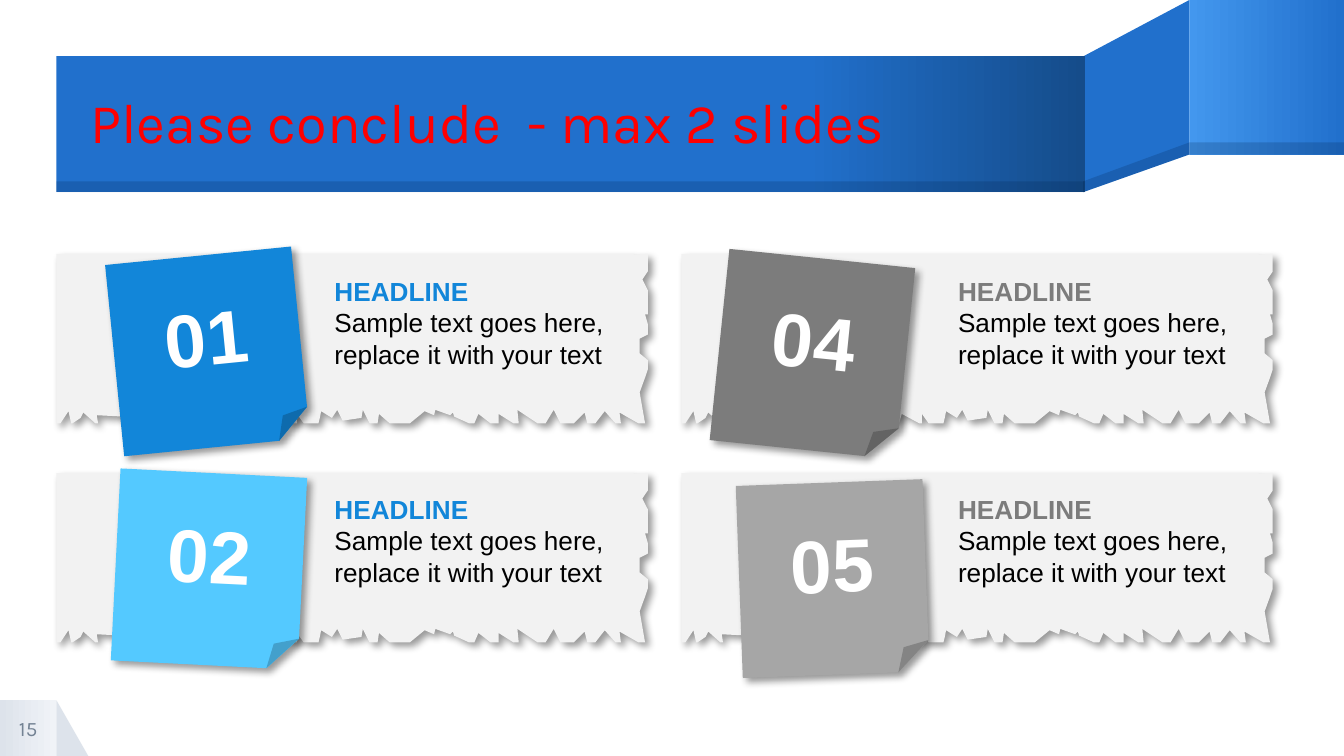
from lxml import etree
from pptx import Presentation
from pptx.dml.color import RGBColor
from pptx.enum import shapes, text
from pptx.oxml import ns
from pptx.util import Inches, Pt

KIND = shapes.MSO_SHAPE
MID = text.MSO_ANCHOR.MIDDLE
BLUE, SKY, GREY, SILVER = "1286D9", "54C9FF", "7C7C7C", "A6A6A6"
BAND, SHADE, PALE = "2170CC", "001F46", "DDE3EB"

# Torn paper edges, in inches from the top left corner of the paper
RIGHT = [
    (4.3, 0), (4.29, 0.01), (4.35, 0), (4.4, 0), (4.4, 0.13), (4.36, 0.19),
    (4.4, 0.27), (4.4, 0.45), (4.38, 0.45), (4.4, 0.52), (4.4, 0.6),
    (4.34, 0.63), (4.34, 0.74), (4.4, 0.79), (4.4, 0.86), (4.38, 0.92),
    (4.34, 1.03), (4.38, 1.26),
]
BOTTOM = [
    (4.33, 1.26), (4.19, 1.18), (4.2, 1.26), (4.16, 1.26), (4.08, 1.17),
    (4.01, 1.26), (3.95, 1.26), (3.93, 1.18), (3.85, 1.26), (3.75, 1.26),
    (3.7, 1.16), (3.64, 1.26), (3.58, 1.26), (3.43, 1.16), (3.44, 1.26),
    (3.4, 1.26), (3.29, 1.19), (3.29, 1.26), (3.23, 1.26), (3.14, 1.19),
    (3.11, 1.26), (3.07, 1.26), (2.96, 1.21), (2.95, 1.18), (2.93, 1.2),
    (2.82, 1.16), (2.81, 1.2), (2.74, 1.17), (2.63, 1.26), (2.48, 1.26),
    (2.4, 1.19), (2.39, 1.26), (2.33, 1.26), (2.28, 1.16), (2.27, 1.22),
    (2.13, 1.24), (2.09, 1.16), (2.05, 1.22), (1.97, 1.17), (1.96, 1.22),
    (1.95, 1.26), (1.84, 1.26), (1.79, 1.19), (1.79, 1.26), (1.77, 1.26),
    (1.64, 1.19), (1.62, 1.26), (1.61, 1.26), (1.52, 1.14), (1.46, 1.21),
    (1.44, 1.26), (1.35, 1.26), (1.32, 1.21), (1.18, 1.18), (1.12, 1.26),
    (1.11, 1.26), (1.06, 1.2), (1, 1.26), (0.98, 1.26), (0.92, 1.18),
    (0.74, 1.18), (0.71, 1.16), (0.5, 1.21), (0.3, 1.2), (0.31, 1.26),
    (0.29, 1.26), (0.2, 1.18), (0.18, 1.22), (0.12, 1.26), (0.11, 1.26),
    (0.09, 1.17), (0.03, 1.26), (0, 1.26),
]
TORN = [(0, 0)] + RIGHT + BOTTOM


def rgb(tone):
    return RGBColor.from_string(tone)


def paint(shape, tone, alpha=None):
    shape.shadow.inherit = False
    shape.line.fill.background()
    shape.fill.solid()
    shape.fill.fore_color.rgb = rgb(tone)
    if alpha:
        node = shape.fill._xPr.find(".//" + ns.qn("a:srgbClr"))
        etree.SubElement(node, ns.qn("a:alpha"), val=str(alpha * 1000))


def blend(shape, first, last, start=0):
    """Fill from left to right, with the change beginning at start."""
    shape.fill.gradient()
    shape.fill.gradient_angle = 0
    for stop, tone, place in zip(shape.fill.gradient_stops, (first, last), (start, 1)):
        stop.color.rgb = rgb(tone)
        stop.position = place


def shade(shape):
    """Cast a soft shadow to the lower right."""
    effects = shape._element.spPr.find(ns.qn("a:effectLst"))
    outer = etree.SubElement(
        effects, ns.qn("a:outerShdw"), blurRad=str(Pt(4)), dist=str(Pt(3)),
        dir=str(45 * 60000), algn="tl", rotWithShape="0")
    tone = etree.SubElement(outer, ns.qn("a:srgbClr"), val="000000")
    etree.SubElement(tone, ns.qn("a:alpha"), val="40000")


def block(slide, kind, box, tone, alpha=None):
    shape = slide.shapes.add_shape(kind, *map(Inches, box))
    paint(shape, tone, alpha)
    return shape


def outline(slide, points, tone, alpha=None):
    spots = [(Inches(x), Inches(y)) for x, y in points]
    pen = slide.shapes.build_freeform(*spots[0])
    pen.add_line_segments(spots[1:], close=True)
    shape = pen.convert_to_shape()
    paint(shape, tone, alpha)
    return shape


def style(para, size, face, tone, bold=False, align=text.PP_ALIGN.LEFT):
    para.alignment = align
    font = para.font
    font.size, font.name, font.bold = Pt(size), face, bold
    font.color.rgb = rgb(tone)


def label(slide, box, words, margin=True):
    """Add a wrapped text box and return its frame."""
    frame = slide.shapes.add_textbox(*map(Inches, box)).text_frame
    frame.word_wrap = True
    frame.text = words
    if not margin:
        frame.margin_left = frame.margin_right = 0
        frame.margin_top = frame.margin_bottom = 0
        frame.vertical_anchor = MID
    return frame


def banner(slide):
    outline(slide, [(8.85, 0), (8.06, 0.42), (8.06, 1.43), (8.85, 1.15)], BAND)
    end = block(slide, KIND.RECTANGLE, (8.85, 0, 1.15, 1.15), BAND)
    blend(end, "4397EE", BAND)
    front = block(slide, KIND.RECTANGLE, (0.42, 0.42, 7.65, 1.01), BAND)
    blend(front, BAND, "154C8A", 0.73)
    outline(slide, [(8.85, 1.06), (8.06, 1.35), (8.06, 1.43), (8.85, 1.15)], SHADE, 20)
    block(slide, KIND.RECTANGLE, (8.85, 1.06, 1.15, 0.09), SHADE, 20)
    block(slide, KIND.RECTANGLE, (0.42, 1.35, 7.65, 0.08), SHADE, 20)
    title = label(slide, (0.67, 0.43, 7.39, 1.01), "Please conclude  - max 2 slides", False)
    style(title.paragraphs[0], 30, "Karla", "FF0000")
    title.paragraphs[0].line_spacing = 0.9


def footer(slide):
    block(slide, KIND.RIGHT_TRIANGLE, (0.42, 5.21, 0.24, 0.42), PALE)
    box = (0, 5.21, 0.42, 0.42)
    blend(block(slide, KIND.RECTANGLE, box, PALE), PALE, "F0F3F7")
    page = label(slide, box, "15", False)
    style(page.paragraphs[0], 11, "Karla", "748394", align=text.PP_ALIGN.CENTER)


def note(slide, spot, turn, tone, number):
    shape = block(slide, KIND.FOLDED_CORNER, (*spot, 1.39, 1.43), tone)
    shade(shape)
    shape.rotation = turn
    frame = shape.text_frame
    frame.text = number
    frame.vertical_anchor = MID
    style(frame.paragraphs[0], 40, "Arial", "FFFFFF", True, text.PP_ALIGN.CENTER)


def card(slide, col, row, spot, turn, tone, number):
    left, top = 0.42 + 4.65 * col, 1.89 + 1.63 * row
    shade(outline(slide, [(left + x, top + y) for x, y in TORN], "F2F2F2"))
    note(slide, spot, turn, tone, number)
    words = "HEADLINE\nSample text goes here, replace it with your text"
    frame = label(slide, (2.39 + 4.64 * col, 2 + 1.62 * row, 2.39, 0.91), words)
    head, body = frame.paragraphs
    style(head, 14, "Arial", (BLUE, GREY)[col], True)
    style(body, 14, "Arial", "000000")


def main():
    deck = Presentation()
    deck.slide_width = Inches(10)
    deck.slide_height = Inches(10) * 9 // 16
    slide = deck.slides.add_slide(deck.slide_layouts[6])
    footer(slide)
    banner(slide)
    card(slide, 0, 0, (0.85, 1.9), 354.3, BLUE, "01")
    card(slide, 0, 1, (0.86, 3.52), 2.9, SKY, "02")
    card(slide, 1, 0, (5.35, 1.92), 5.9, GREY, "04")
    card(slide, 1, 1, (5.5, 3.59), 357.9, SILVER, "05")
    deck.save("out.pptx")


if __name__ == "__main__":
    main()
